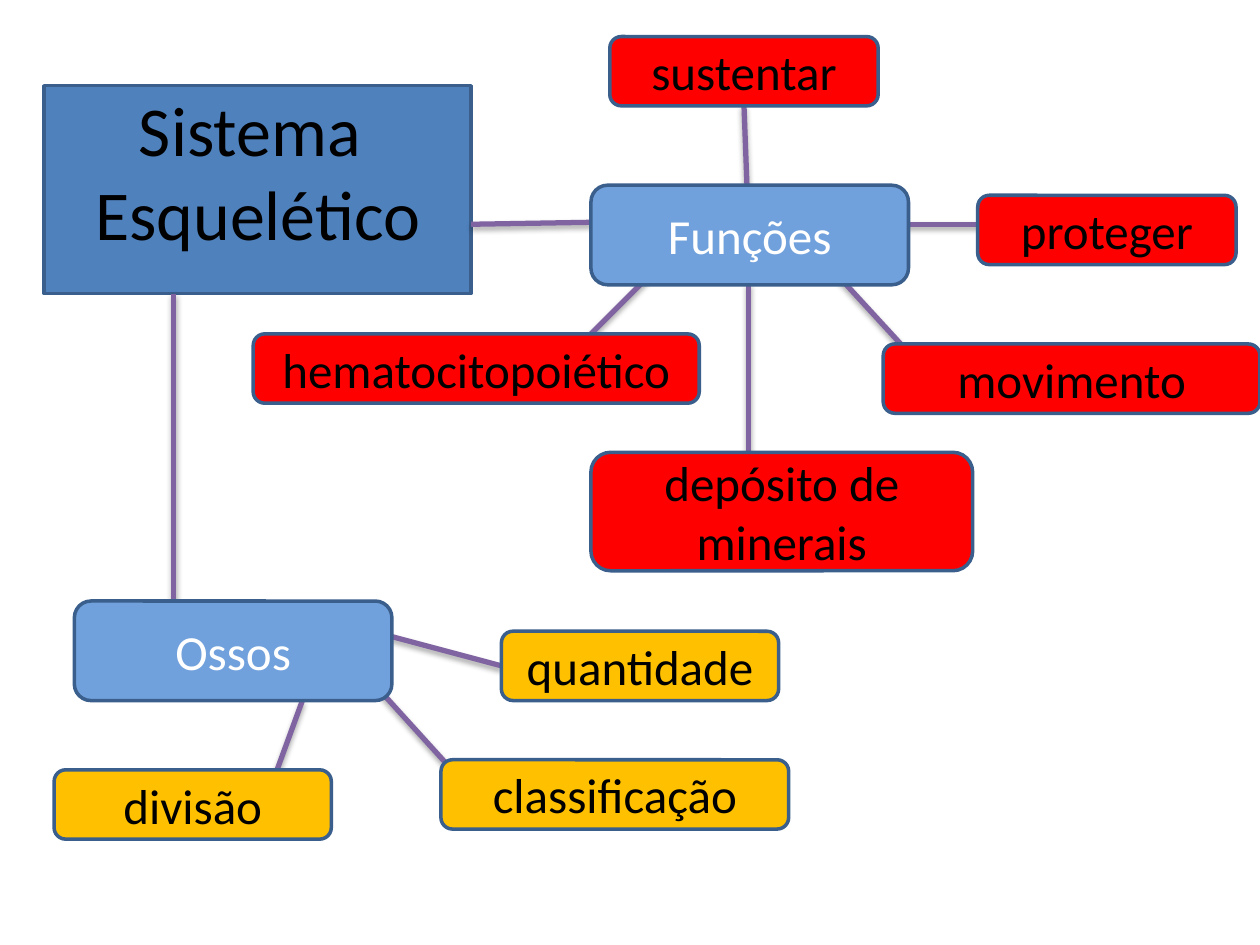
"""Build a concept map of the skeletal system."""
from dataclasses import dataclass

from lxml import etree
from pptx import Presentation
from pptx.dml.color import RGBColor
from pptx.enum.shapes import MSO_CONNECTOR, MSO_SHAPE
from pptx.enum.text import MSO_ANCHOR, MSO_AUTO_SIZE, PP_ALIGN
from pptx.oxml import parse_xml
from pptx.oxml.ns import qn
from pptx.util import Inches, Pt

ROUND = MSO_SHAPE.ROUNDED_RECTANGLE
STRAIGHT = MSO_CONNECTOR.STRAIGHT
MIDDLE = MSO_ANCHOR.MIDDLE
CENTER = PP_ALIGN.CENTER
FIXED = MSO_AUTO_SIZE.NONE
BOTTOM, LEFT = 2, 1

HUES = {
    "root": "4F81BD", "branch": "71A1DC", "role": "FF0000", "bone": "FFC000",
    "edge": "3A5F8C", "link": "8064A2", "dark": "000000", "light": "FFFFFF",
}
FRAME = {"word_wrap": True, "auto_size": FIXED, "vertical_anchor": MIDDLE}
SHADOW = (
    '<a:effectLst xmlns:a="http://schemas.openxmlformats.org/drawingml/2006/main">'
    '<a:outerShdw blurRad="40000" dist="23000" dir="5400000" rotWithShape="0">'
    '<a:srgbClr val="000000"><a:alpha val="35000"/></a:srgbClr>'
    '</a:outerShdw></a:effectLst>'
)


@dataclass
class Node:
    text: str
    kind: str
    x: float
    y: float
    w: float
    h: float = 0.55
    ink: str = "dark"
    size: int = 28


@dataclass
class Link:
    x1: float
    y1: float
    x2: float
    y2: float
    node: str = ""
    side: int = 0


ROOT = Node("Sistema \nEsquelético", "root", 0.35, 0.68, 3.39, 1.65, size=40)
NODES = [
    Node("Funções", "branch", 4.69, 1.47, 2.52, 0.79, "light"),
    Node("Ossos", "branch", 0.59, 4.77, 2.52, 0.79, "light"),
    Node("sustentar", "role", 4.84, 0.29, 2.13),
    Node("proteger", "role", 7.76, 1.55, 2.05),
    Node("movimento", "role", 7.01, 2.73, 2.99),
    Node("depósito de minerais", "role", 4.69, 3.59, 3.03, 0.94),
    Node("hematocitopoiético", "role", 2.01, 2.65, 3.54),
    Node("quantidade", "bone", 3.98, 5.01, 2.2),
    Node("classificação", "bone", 3.5, 6.03, 2.76),
    Node("divisão", "bone", 0.43, 6.11, 2.2),
]
LINKS = [
    Link(2.17, 6.19, 2.4, 5.56),
    Link(3.66, 6.19, 2.87, 5.32),
    Link(3.98, 5.29, 2.95, 5.01, "quantidade", LEFT),
    Link(4.69, 2.65, 5.16, 2.18),
    Link(5.94, 3.67, 5.94, 2.25),
    Link(7.36, 2.96, 6.57, 2.1),
    Link(5.91, 0.84, 5.94, 1.78, "sustentar", BOTTOM),
    Link(7.99, 1.78, 6.97, 1.78),
    Link(1.38, 2.33, 1.38, 4.85),
    Link(3.74, 1.78, 6.18, 1.74),
]


def hue(name: str) -> RGBColor:
    return RGBColor.from_string(HUES[name])


def apply(item, values: dict) -> None:
    for name, value in values.items():
        setattr(item, name, value)


def stroke(line, name: str, width: float) -> None:
    line.color.rgb = hue(name)
    line.width = Pt(width)


def style(shape, node: Node) -> None:
    shape.fill.solid()
    shape.fill.fore_color.rgb = hue(node.kind)
    stroke(shape.line, "edge", 2)
    shape.shadow.inherit = False
    frame = shape.text_frame
    apply(frame, FRAME)
    frame.text = node.text
    for para in frame.paragraphs:
        para.alignment = CENTER
        for run in para.runs:
            apply(run.font, {"name": "Calibri", "size": Pt(node.size)})
            run.font.color.rgb = hue(node.ink)


def add_root(slide, node: Node) -> None:
    title = slide.shapes.title
    apply(title, {
        "left": Inches(node.x), "top": Inches(node.y),
        "width": Inches(node.w), "height": Inches(node.h),
    })
    shape = etree.SubElement(title.element.spPr, qn("a:prstGeom"), prst="roundRect")
    etree.SubElement(shape, qn("a:avLst"))
    style(title, node)
    title.text_frame.margin_bottom = Inches(0.35)


def add_node(slide, node: Node):
    box = [Inches(v) for v in (node.x, node.y, node.w, node.h)]
    shape = slide.shapes.add_shape(ROUND, *box)
    style(shape, node)
    return shape


def add_link(slide, link: Link):
    ends = [Inches(v) for v in (link.x1, link.y1, link.x2, link.y2)]
    line = slide.shapes.add_connector(STRAIGHT, *ends)
    stroke(line.line, "link", 3)
    line.element.spPr.append(parse_xml(SHADOW))
    return line


def main() -> None:
    deck = Presentation()
    apply(deck, {"slide_width": Inches(10), "slide_height": Inches(7.5)})
    slide = deck.slides.add_slide(deck.slide_layouts[5])
    add_root(slide, ROOT)
    lines = [add_link(slide, link) for link in LINKS]
    shapes = {node.text: add_node(slide, node) for node in NODES}
    for link, line in zip(LINKS, lines):
        if link.node:
            line.begin_connect(shapes[link.node], link.side)
    deck.save("out.pptx")


if __name__ == "__main__":
    main()
